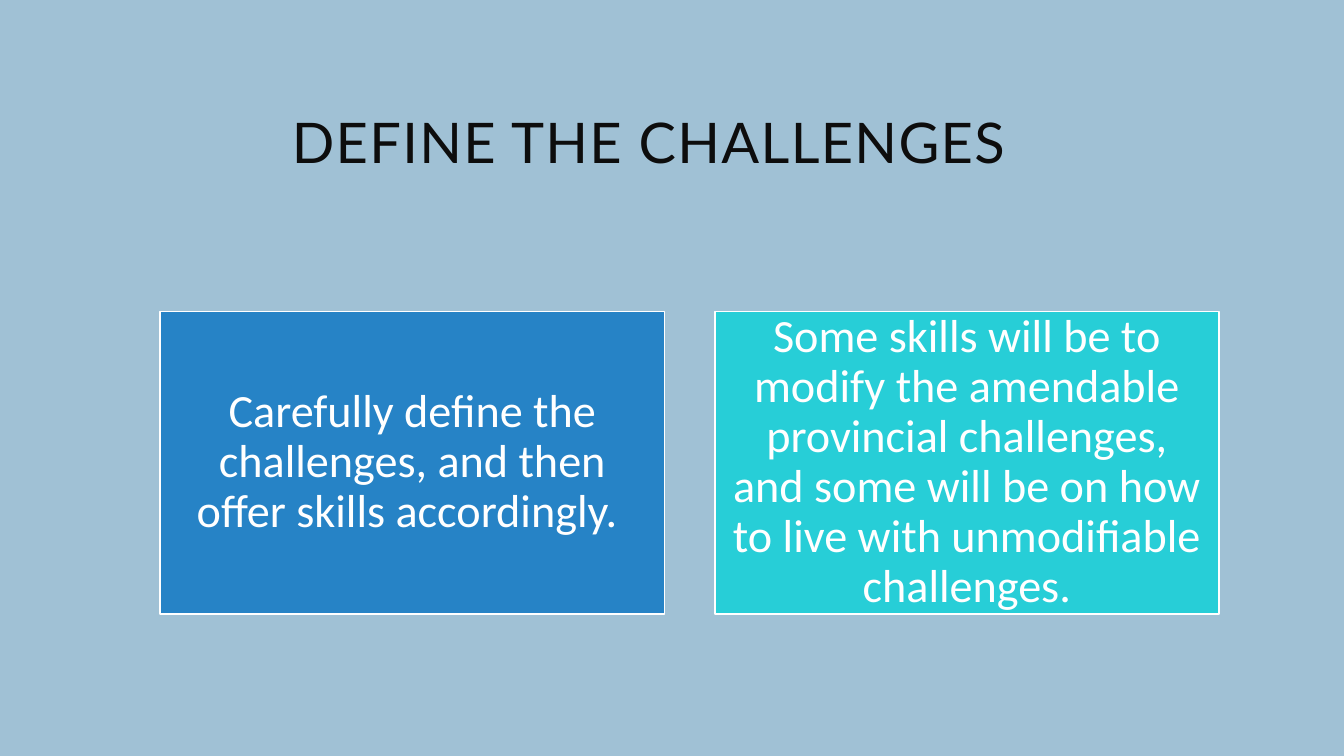
from dataclasses import dataclass

from pptx import Presentation
from pptx.dml.color import RGBColor
from pptx.enum.shapes import MSO_SHAPE
from pptx.enum.text import MSO_ANCHOR, PP_ALIGN
from pptx.util import Inches, Pt


@dataclass(frozen=True)
class Theme:
    background: str = "A0C1D5"
    title_ink: str = "0D0D0D"
    light: str = "FFFFFF"
    blue: str = "2683C6"
    turquoise: str = "27CED7"
    title_font: str = "Lato"
    body_font: str = "Calibri"
    title_size: int = 40
    body_size: int = 33
    border: float = 1.25


THEME = Theme()

# Card grid, in inches
GRID_LEFT, GRID_TOP = 1.59, 3.09
CARD_WIDTH, CARD_HEIGHT, GAP = 5, 3, 0.5
CARD_INSET = 0.14

CARDS = [
    ("Carefully define the challenges, and then offer skills accordingly. ", THEME.blue),
    ("Some skills will be to modify the amendable provincial challenges, "
     "and some will be on how to live with unmodifiable challenges.", THEME.turquoise),
]


def write_centred(frame, wording, font_name, size, color, line_spacing):
    frame.text = wording
    frame.word_wrap = True
    frame.vertical_anchor = MSO_ANCHOR.MIDDLE
    paragraph = frame.paragraphs[0]
    paragraph.alignment = PP_ALIGN.CENTER
    paragraph.line_spacing = line_spacing
    run = paragraph.runs[0]
    run.font.name = font_name
    run.font.size = Pt(size)
    run.font.color.rgb = RGBColor.from_string(color)
    return run


def add_title(slide, wording):
    title = slide.shapes.title
    title.left, title.top = Inches(1.12), Inches(0.64)
    title.width, title.height = Inches(10.63), Inches(1.64)
    run = write_centred(title.text_frame, wording, THEME.title_font,
                        THEME.title_size, THEME.title_ink, 0.8)
    # Letter spacing of one point
    run.font._element.set("spc", "100")


def add_card(slide, column, wording, fill):
    card = slide.shapes.add_shape(
        MSO_SHAPE.RECTANGLE,
        Inches(GRID_LEFT + column * (CARD_WIDTH + GAP)), Inches(GRID_TOP),
        Inches(CARD_WIDTH), Inches(CARD_HEIGHT))
    card.shadow.inherit = False
    card.fill.solid()
    card.fill.fore_color.rgb = RGBColor.from_string(fill)
    card.line.color.rgb = RGBColor.from_string(THEME.light)
    card.line.width = Pt(THEME.border)
    frame = card.text_frame
    frame.margin_left = frame.margin_right = Inches(CARD_INSET)
    frame.margin_top = frame.margin_bottom = Inches(CARD_INSET)
    write_centred(frame, wording, THEME.body_font, THEME.body_size, THEME.light, 0.9)


def main():
    deck = Presentation()
    deck.slide_width, deck.slide_height = Inches(13.33), Inches(7.5)
    slide = deck.slides.add_slide(deck.slide_layouts.get_by_name("Title Only"))

    # Background
    slide.background.fill.solid()
    slide.background.fill.fore_color.rgb = RGBColor.from_string(THEME.background)

    # Title and cards
    add_title(slide, "DEFINE THE CHALLENGES")
    for column, (wording, fill) in enumerate(CARDS):
        add_card(slide, column, wording, fill)

    deck.save("out.pptx")


if __name__ == "__main__":
    main()
